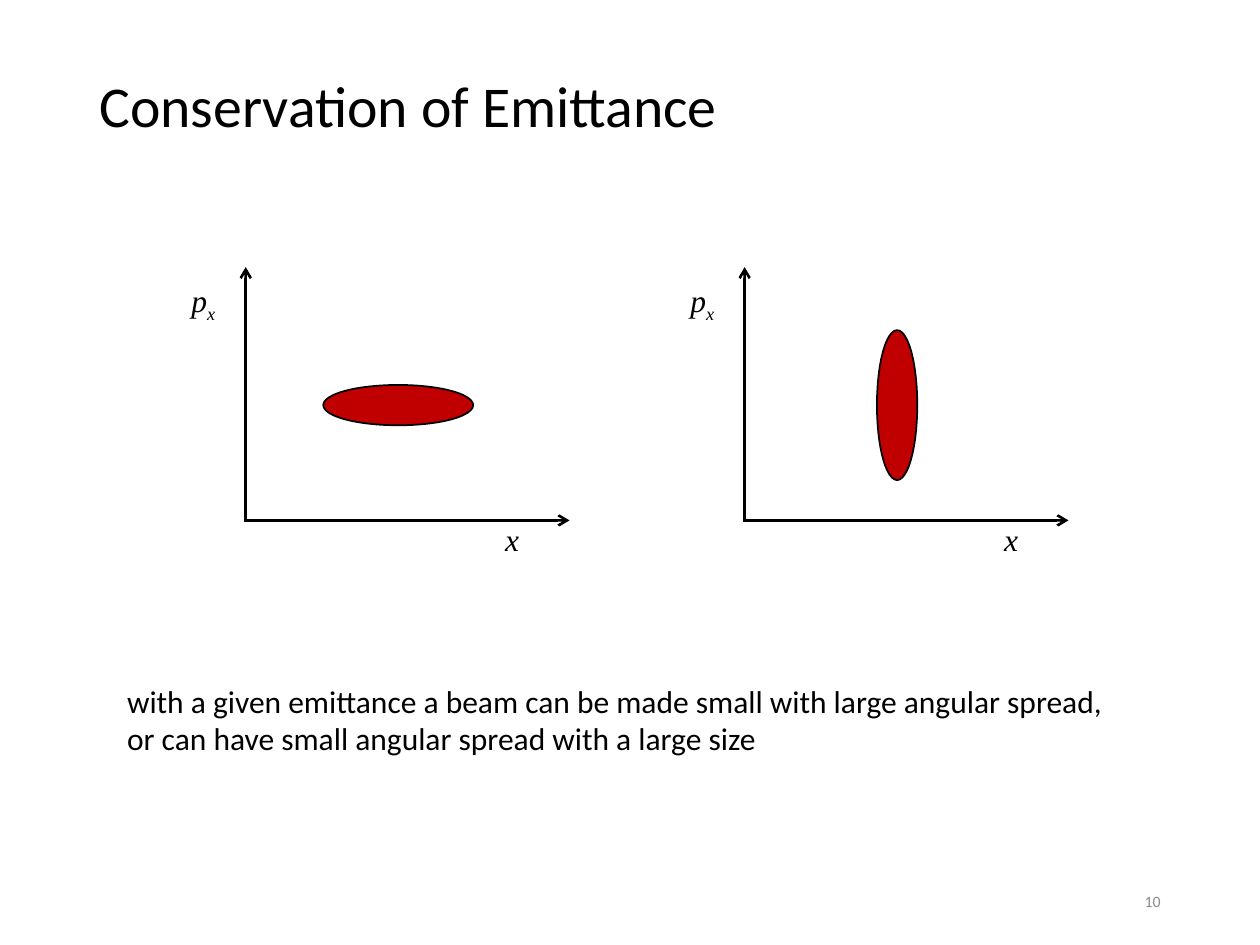
from lxml import etree
from pptx import Presentation
from pptx.dml.color import RGBColor as RGB
from pptx.enum.shapes import MSO_CONNECTOR as Line, MSO_SHAPE as Shape
from pptx.enum.text import MSO_ANCHOR as Anchor, PP_ALIGN as Align
from pptx.oxml.ns import qn
from pptx.util import Inches, Pt

COLORS = {"ink": "000000", "beam": "C00000", "page": "8C8C8C"}
SANS, SERIF = "Calibri", "Times New Roman"


class Deck:
    def __init__(self):
        self.prs = Presentation()
        self.prs.slide_width, self.prs.slide_height = Inches(10), Inches(7.5)
        self.slide = self.prs.slides.add_slide(self.prs.slide_layouts[6])
        self.home = self.slide.shapes

    def color(self, name):
        return RGB.from_string(COLORS[name])

    def group(self):
        """Start a group that takes the elements drawn next."""
        self.home = self.slide.shapes.add_group_shape().shapes

    def ungroup(self):
        self.home = self.slide.shapes

    def text(self, box, runs, size, font=SANS, color="ink", italic=False,
             anchor=Anchor.TOP, align=Align.LEFT, space=1.0):
        """Add one paragraph; runs are (words, baseline shift in percent)."""
        frame = self.home.add_textbox(*map(Inches, box)).text_frame
        frame.word_wrap = True
        frame.vertical_anchor = anchor
        para = frame.paragraphs[0]
        para.alignment, para.line_spacing = align, space
        for words, shift in runs:
            run = para.add_run()
            run.text = words
            run.font.name, run.font.size = font, Pt(size)
            run.font.italic = italic
            run.font.color.rgb = self.color(color)
            if shift:
                run.font._element.set("baseline", str(shift * 1000))

    def label(self, box, *runs):
        self.text(box, runs, 18, SERIF, italic=True)

    def arrow(self, *ends):
        axis = self.home.add_connector(Line.STRAIGHT, *map(Inches, ends))
        axis.line.color.rgb = self.color("ink")
        axis.line.width = Pt(1.5)
        stroke = axis.line._get_or_add_ln()
        etree.SubElement(stroke, qn("a:tailEnd"), type="arrow")
        etree.SubElement(axis._element.spPr, qn("a:effectLst"))

    def oval(self, box, turn):
        oval = self.home.add_shape(Shape.OVAL, *map(Inches, box))
        oval.shadow.inherit = False
        oval.rotation = turn
        oval.fill.solid()
        oval.fill.fore_color.rgb = self.color("beam")
        oval.line.color.rgb = self.color("ink")
        oval.line.width = Pt(1)

    def plot(self, left, turn):
        """Draw a phase space plot whose origin is at left."""
        base = 4.13
        self.group()
        self.arrow(left, base + 0.01, left, 2.12)
        self.arrow(left, base, left + 2.57, base)
        self.oval((left + 1.05, 2.62, 0.32, 1.19), turn)
        self.label((left + 1.96, 4.08, 0.45, 0.54), ("x", 0))
        self.label((left - 0.53, 2.18, 0.61, 0.54), ("p", 0), ("x", -25))
        self.ungroup()


def main():
    deck = Deck()
    deck.text((0.69, 0.4, 8.62, 0.92), [("Conservation of Emittance", 0)], 33,
              anchor=Anchor.MIDDLE, space=0.9)
    for left, turn in ((5.91, 0), (1.95, 90)):
        deck.plot(left, turn)
    deck.text((0.91, 5.36, 8.18, 0.71),
              [("with a given emittance a beam can be made small with large "
                "angular spread, or can have small angular spread with a "
                "large size", 0)], 18)
    deck.text((7.06, 6.95, 2.25, 0.4), [("10", 0)], 9, color="page",
              anchor=Anchor.MIDDLE, align=Align.RIGHT)
    deck.prs.save("out.pptx")


if __name__ == "__main__":
    main()
